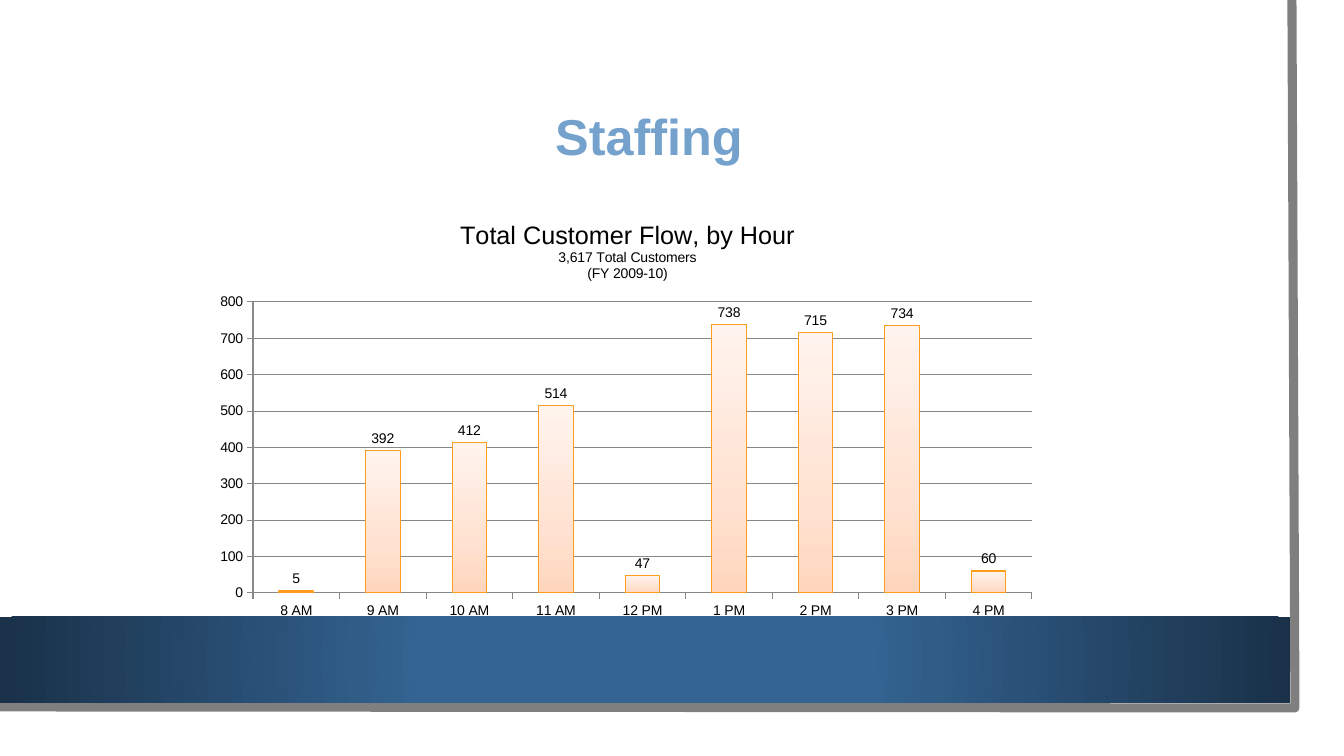
from lxml import etree
from pptx import Presentation
from pptx.chart.data import CategoryChartData
from pptx.dml.color import RGBColor
from pptx.enum.chart import XL_CHART_TYPE, XL_LABEL_POSITION, XL_TICK_MARK
from pptx.enum.shapes import MSO_SHAPE
from pptx.enum.text import MSO_ANCHOR, PP_ALIGN
from pptx.oxml import parse_xml
from pptx.oxml.ns import nsdecls, qn
from pptx.util import Emu, Pt

COLUMNS = XL_CHART_TYPE.COLUMN_CLUSTERED
OUTSIDE_END = XL_LABEL_POSITION.OUTSIDE_END
TICK_OUTSIDE = XL_TICK_MARK.OUTSIDE
RECTANGLE = MSO_SHAPE.RECTANGLE
MIDDLE = MSO_ANCHOR.MIDDLE
CENTER = PP_ALIGN.CENTER

BLACK = RGBColor(0x00, 0x00, 0x00)
FRAME_GRAY = RGBColor(0x7F, 0x7F, 0x7F)
AXIS_GRAY = RGBColor(0x88, 0x88, 0x88)
TITLE_BLUE = RGBColor(0x74, 0xA2, 0xCD)
BAR_ORANGE = RGBColor(0xFE, 0x9D, 0x1C)
BAND_BLUE = RGBColor(0x34, 0x64, 0x92)
BAND_NAVY = RGBColor(0x19, 0x31, 0x49)
PEACH = RGBColor(0xFF, 0xD6, 0xBD)
LIGHT_PEACH = RGBColor(0xFF, 0xE2, 0xD1)
PALE_PEACH = RGBColor(0xFF, 0xF4, 0xEE)

FONT = "Arial"
TITLE = "Staffing"
CHART_TITLE = [
    ("Total Customer Flow, by Hour", 18),
    ("3,617 Total Customers", 10),
    ("(FY 2009-10)", 10),
]
CUSTOMERS = {
    "8 AM": 5, "9 AM": 392, "10 AM": 412, "11 AM": 514, "12 PM": 47,
    "1 PM": 738, "2 PM": 715, "3 PM": 734, "4 PM": 60,
}
BAND_STOPS = [(0, BAND_BLUE), (34, BAND_BLUE), (100, BAND_NAVY)]
BAR_STOPS = [(0, PEACH), (35, LIGHT_PEACH), (100, PALE_PEACH)]
RADIAL = ('<a:path %s path="circle"><a:fillToRect l="50000" t="50000" '
          'r="50000" b="50000"/></a:path>' % nsdecls("a"))
UPWARD = '<a:lin %s ang="16200000" scaled="0"/>' % nsdecls("a")

# Lengths in px
SLIDE_SIZE = (1344, 756)
FRAME_POINTS = [(1292, 0), (1295, 708), (-3, 707)]
BAND_BOX = (0, 617, 1290, 86)
TITLE_BOX = (76, 76, 1146, 127)
CHART_BOX = (205, 203, 845, 425)
PLOT_BOX = (253, 302, 779, 291)
TITLE_INSET = 10
PX = 914400 / 100.8


def px(length):
    return Emu(round(length * PX))


def place(box):
    return [px(length) for length in box]


def set_gradient(fill, owner, stops, direction):
    """Give the fill of the owner element any number of stops."""
    fill.gradient()
    gradient = owner.find(".//" + qn("a:gradFill"))
    for child in list(gradient):
        gradient.remove(child)
    stop_list = etree.SubElement(gradient, qn("a:gsLst"))
    for percent, color in stops:
        stop = etree.SubElement(stop_list, qn("a:gs"), pos=str(percent * 1000))
        etree.SubElement(stop, qn("a:srgbClr"), val=str(color))
    gradient.append(parse_xml(direction))


def add_backdrop(slide):
    builder = slide.shapes.build_freeform(*FRAME_POINTS[0], scale=PX)
    builder.add_line_segments(FRAME_POINTS[1:], close=False)
    frame = builder.convert_to_shape()
    frame.shadow.inherit = False
    frame.fill.background()
    frame.line.color.rgb = FRAME_GRAY
    frame.line.width = Pt(6.5)

    band = slide.shapes.add_shape(RECTANGLE, *place(BAND_BOX))
    band.shadow.inherit = False
    band.line.fill.background()
    set_gradient(band.fill, band._element.spPr, BAND_STOPS, RADIAL)


def format_title(title):
    title.left, title.top, title.width, title.height = place(TITLE_BOX)
    frame = title.text_frame
    frame.text = TITLE
    frame.word_wrap = True
    frame.vertical_anchor = MIDDLE
    frame.margin_left = frame.margin_right = px(TITLE_INSET)
    frame.margin_top = frame.margin_bottom = px(TITLE_INSET)
    heading = frame.paragraphs[0]
    heading.alignment = CENTER
    heading.line_spacing = 0.9
    heading.font.name = FONT
    heading.font.size = Pt(36)
    heading.font.bold = True
    heading.font.color.rgb = TITLE_BLUE


def set_chart_title(chart):
    frame = chart.chart_title.text_frame
    chart.chart_title.include_in_layout = False
    for index, (line, size) in enumerate(CHART_TITLE):
        paragraph = frame.add_paragraph() if index else frame.paragraphs[0]
        paragraph.alignment = CENTER
        paragraph.font.name = FONT
        paragraph.font.size = Pt(size)
        paragraph.font.bold = False
        paragraph.font.color.rgb = BLACK
        run = paragraph.add_run()
        run.text = line
        run.font.size = Pt(size)


def fix_plot_area(chart):
    """Set the inner plot area as fractions of the chart box."""
    left, top, width, height = CHART_BOX
    x, y, w, h = PLOT_BOX
    plot_area = chart._chartSpace.chart.plotArea
    for old in plot_area.findall(qn("c:layout")):
        plot_area.remove(old)
    layout = etree.Element(qn("c:layout"))
    manual = etree.SubElement(layout, qn("c:manualLayout"))
    settings = [
        ("layoutTarget", "inner"), ("xMode", "edge"), ("yMode", "edge"),
        ("x", (x - left) / width), ("y", (y - top) / height),
        ("w", w / width), ("h", h / height),
    ]
    for tag, value in settings:
        etree.SubElement(manual, qn("c:" + tag), val=str(value))
    plot_area.insert(0, layout)


def add_customer_chart(slide):
    data = CategoryChartData()
    data.categories = list(CUSTOMERS)
    data.add_series("Series 1", list(CUSTOMERS.values()))
    chart = slide.shapes.add_chart(COLUMNS, *place(CHART_BOX), data).chart
    chart.has_legend = False
    chart.font.name = FONT
    chart.font.size = Pt(10)
    chart.font.color.rgb = BLACK
    set_chart_title(chart)
    fix_plot_area(chart)

    for axis in (chart.category_axis, chart.value_axis):
        axis.major_tick_mark = TICK_OUTSIDE
        axis.format.line.color.rgb = AXIS_GRAY
    values = chart.value_axis
    values.minimum_scale, values.maximum_scale, values.major_unit = 0, 800, 100
    values.has_major_gridlines = True
    values.major_gridlines.format.line.color.rgb = AXIS_GRAY

    plot = chart.plots[0]
    plot.vary_by_categories = False
    plot.gap_width = 150
    plot.has_data_labels = True
    plot.data_labels.show_value = True
    plot.data_labels.position = OUTSIDE_END
    bars = plot.series[0]
    set_gradient(bars.format.fill, bars._element, BAR_STOPS, UPWARD)
    bars.format.line.color.rgb = BAR_ORANGE
    bars.format.line.width = Pt(0.75)


def main():
    presentation = Presentation()
    presentation.slide_width, presentation.slide_height = place(SLIDE_SIZE)
    title_only = presentation.slide_layouts[5]
    slide = presentation.slides.add_slide(title_only)
    add_backdrop(slide)
    format_title(slide.shapes.title)
    add_customer_chart(slide)
    presentation.save("out.pptx")


if __name__ == "__main__":
    main()
